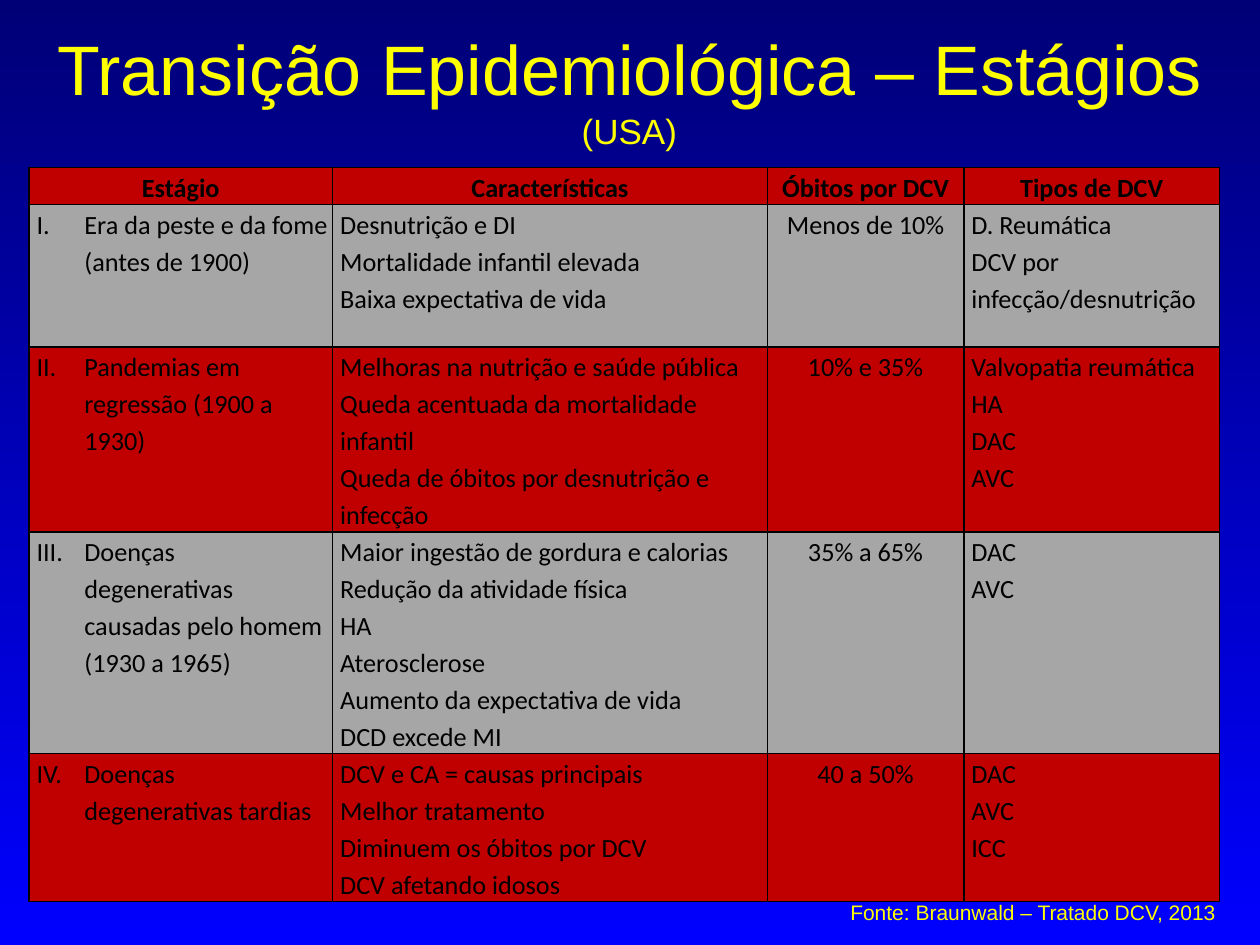
from dataclasses import dataclass

from lxml import etree
from pptx import Presentation
from pptx import util as u
from pptx.dml.color import RGBColor
from pptx.enum import text
from pptx.oxml import ns

CENTER, LEFT = text.PP_ALIGN.CENTER, text.PP_ALIGN.LEFT
COLUMNS, ROWS = 100, 75


@dataclass(frozen=True)
class Theme:
    sky_top: str = "000076"
    sky_bottom: str = "0000FF"
    accent: str = "FFFF00"
    ink: str = "000000"
    red: str = "C00000"
    grey: str = "A6A6A6"
    heading_font: str = "Arial"
    table_font: str = "Calibri"
    title_size: int = 40
    subtitle_size: int = 20
    table_size: int = 15
    source_size: int = 12


def write(paragraph, wording, *, font, size, color, bold=False, align=LEFT, spacing=None):
    """Add wording to a paragraph; a vertical tab stands for a line break."""
    paragraph.alignment = align
    if spacing:
        paragraph.line_spacing = spacing
    for number, line in enumerate(wording.split("\v")):
        if number:
            paragraph.add_line_break()
        run = paragraph.add_run()
        run.text = line
        run.font.name = font
        run.font.size = u.Pt(size)
        run.font.bold = bold
        run.font.color.rgb = RGBColor.from_string(color)


def border(cell, color, width=1):
    properties = cell._tc.get_or_add_tcPr()
    for position, side in enumerate(("lnL", "lnR", "lnT", "lnB")):
        line = etree.Element(ns.qn(f"a:{side}"), w=str(u.Pt(width)))
        fill = etree.SubElement(line, ns.qn("a:solidFill"))
        etree.SubElement(fill, ns.qn("a:srgbClr"), val=color)
        properties.insert(position, line)


class EpidemiologySlide:
    """Places elements on a grid of COLUMNS by ROWS."""

    def __init__(self, deck, theme):
        self.theme = theme
        self.column = deck.slide_width / COLUMNS
        self.row = deck.slide_height / ROWS
        self.slide = deck.slides.add_slide(deck.slide_layouts[5])

    def place(self, left, top, width, height):
        return (round(left * self.column), round(top * self.row),
                round(width * self.column), round(height * self.row))

    def background(self):
        fill = self.slide.background.fill
        fill.gradient()
        fill.gradient_angle = 270
        for stop, color in zip(fill.gradient_stops, (self.theme.sky_top, self.theme.sky_bottom)):
            stop.color.rgb = RGBColor.from_string(color)

    def title(self, heading, subtitle, area):
        title = self.slide.shapes.title
        title.left, title.top, title.width, title.height = self.place(*area)
        frame = title.text_frame
        frame.vertical_anchor = text.MSO_ANCHOR.MIDDLE
        frame.word_wrap = True
        for wording, size in ((heading + " ", self.theme.title_size),
                              (subtitle, self.theme.subtitle_size)):
            write(frame.paragraphs[0], wording, font=self.theme.heading_font,
                  size=size, color=self.theme.accent, align=CENTER)

    def source(self, wording, area):
        frame = self.slide.shapes.add_textbox(*self.place(*area)).text_frame
        frame.word_wrap = True
        frame.vertical_anchor = text.MSO_ANCHOR.MIDDLE
        write(frame.paragraphs[0], wording, font=self.theme.heading_font,
              size=self.theme.source_size, color=self.theme.accent, align=CENTER)

    def table(self, header, stages, left, top, widths, heights):
        area = self.place(left, top, sum(widths), sum(heights))
        table = self.slide.shapes.add_table(len(heights), len(widths), *area).table
        for column, width in zip(table.columns, widths):
            column.width = round(width * self.column)
        for row, height in zip(table.rows, heights):
            row.height = round(height * self.row)
        for r, contents in enumerate([header, *stages]):
            for c, lines in enumerate(contents):
                self.cell(table.cell(r, c), lines, r, c)

    def cell(self, cell, lines, r, c):
        is_header, is_stage = r == 0, r > 0 and c == 0
        cell.margin_left = u.Inches(0.06)
        cell.margin_right = u.Inches(0.03 if is_stage else 0.06)
        cell.margin_top = cell.margin_bottom = 0
        cell.fill.solid()
        cell.fill.fore_color.rgb = RGBColor.from_string(
            self.theme.grey if r % 2 else self.theme.red)
        border(cell, self.theme.ink)
        frame = cell.text_frame
        for number, line in enumerate(lines):
            paragraph = frame.add_paragraph() if number else frame.paragraphs[0]
            write(paragraph, line, font=self.theme.table_font, size=self.theme.table_size,
                  color=self.theme.ink, bold=is_header, spacing=1.15,
                  align=CENTER if is_header or c == 2 else LEFT)
            if is_stage:
                hanging = u.Inches(0.38)
                properties = paragraph._p.get_or_add_pPr()
                properties.set("marL", str(hanging))
                properties.set("indent", str(-hanging))


HEADER = [["Estágio"], ["Características"], ["Óbitos por DCV"], ["Tipos de DCV"]]
STAGES = [
    [["I.\tEra da peste e da fome (antes de 1900)"],
     ["Desnutrição e DI", "Mortalidade infantil elevada", "Baixa expectativa de vida"],
     ["Menos de 10%"],
     ["D. Reumática", "DCV por infecção/desnutrição"]],
    [["II.\tPandemias em regressão (1900 a 1930)"],
     ["Melhoras na nutrição e saúde pública", "Queda acentuada da mortalidade infantil",
      "Queda de óbitos por desnutrição e infecção"],
     ["10% e 35%"],
     ["Valvopatia reumática", "HA", "DAC", "AVC"]],
    [["III.\tDoenças\vdegenerativas causadas pelo homem (1930 a 1965)"],
     ["Maior ingestão de gordura e calorias", "Redução da atividade física", "HA",
      "Aterosclerose", "Aumento da expectativa de vida", "DCD excede MI"],
     ["35% a 65%"],
     ["DAC", "AVC"]],
    [["IV.\tDoenças\vdegenerativas tardias"],
     ["DCV e CA = causas principais", "Melhor tratamento", "Diminuem os óbitos por DCV",
      "DCV afetando idosos"],
     ["40 a 50%"],
     ["DAC", "AVC", "ICC"]],
]


def main():
    deck = Presentation()
    deck.slide_width, deck.slide_height = u.Inches(10), u.Inches(7.5)
    page = EpidemiologySlide(deck, Theme())
    page.background()
    page.title("Transição Epidemiológica – Estágios", "(USA)", (2.3, 0.8, 95.3, 12.5))
    page.table(HEADER, STAGES, left=2.3, top=13.3,
               widths=(24.1, 34.5, 15.6, 20.3), heights=(2.8, 11.3, 14.1, 16.9, 11.3))
    page.source("Fonte: Braunwald – Tratado DCV, 2013", (62.1, 68.9, 39.8, 7))
    deck.save("out.pptx")


if __name__ == "__main__":
    main()
